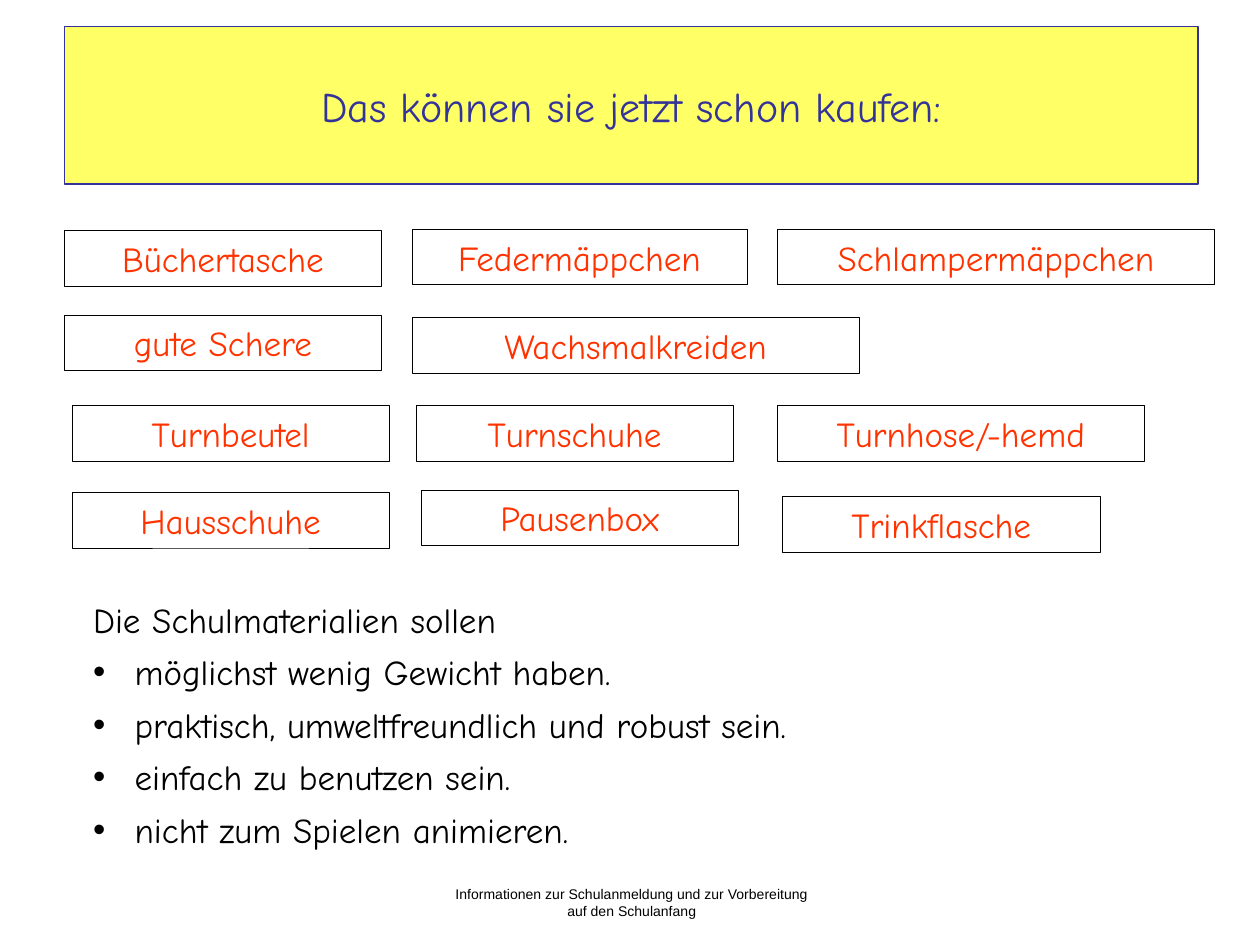
from dataclasses import dataclass

from lxml.etree import SubElement
from pptx import Presentation
from pptx.dml.color import RGBColor as RGB
from pptx.enum.shapes import MSO_SHAPE as SHAPE
from pptx.enum.text import MSO_ANCHOR as ANCHOR, PP_ALIGN as ALIGN
from pptx.oxml.ns import qn
from pptx.util import Inches, Pt


@dataclass(frozen=True)
class Theme:
    font: str = "Comic Neue"
    footer_font: str = "Arial"
    title_size: int = 24
    body_size: int = 20
    footer_size: int = 8
    black: RGB = RGB(0x00, 0x00, 0x00)
    blue: RGB = RGB(0x33, 0x33, 0x99)
    yellow: RGB = RGB(0xFF, 0xFF, 0x66)
    red: RGB = RGB(0xFF, 0x33, 0x00)


T = Theme()
ITEM_HEIGHT = 0.44
ITEMS = [
    ("Büchertasche", 0.51, 1.83, 2.52),
    ("Federmäppchen", 3.27, 1.82, 2.66),
    ("Schlampermäppchen", 6.17, 1.82, 3.47),
    ("gute Schere", 0.51, 2.5, 2.52),
    ("Wachsmalkreiden", 3.27, 2.52, 3.55),
    ("Turnbeutel", 0.57, 3.22, 2.52),
    ("Turnschuhe", 3.3, 3.22, 2.52),
    ("Turnhose/-hemd", 6.17, 3.22, 2.91),
    ("Hausschuhe", 0.57, 3.91, 2.52),
    ("Pausenbox", 3.34, 3.89, 2.52),
    ("Trinkflasche", 6.21, 3.94, 2.52),
]
DEMANDS = [
    "möglichst wenig Gewicht haben.",
    "praktisch, umweltfreundlich und robust sein.",
    "einfach zu benutzen sein.",
    "nicht zum Spielen animieren.",
]


def add_run(p, text, size, color, font=T.font):
    r = p.add_run()
    r.text = text
    r.font.name = font
    r.font.size = Pt(size)
    r.font.color.rgb = color


def add_bullet(p, indent):
    pPr = p._p.get_or_add_pPr()
    pPr.set("marL", str(indent))
    pPr.set("indent", str(-indent))
    SubElement(pPr, qn("a:buFont")).set("typeface", "Arial")
    SubElement(pPr, qn("a:buChar")).set("char", "•")


def add_box(s, text, box, size, color, line, width, fill=None):
    sp = s.shapes.add_shape(SHAPE.RECTANGLE, *map(Inches, box))
    sp.shadow.inherit = False
    if fill is None:
        sp.fill.background()
    else:
        sp.fill.solid()
        sp.fill.fore_color.rgb = fill
    sp.line.color.rgb = line
    sp.line.width = Pt(width)
    tf = sp.text_frame
    tf.word_wrap = True
    tf.vertical_anchor = ANCHOR.MIDDLE
    p = tf.paragraphs[0]
    p.alignment = ALIGN.CENTER
    add_run(p, text, size, color)


def add_text(s, box):
    tf = s.shapes.add_textbox(*map(Inches, box)).text_frame
    tf.word_wrap = True
    return tf


def add_demands(s):
    tf = add_text(s, (0.64, 4.7, 9, 2.54))
    p = tf.paragraphs[0]
    p.space_before = Pt(6)
    add_run(p, "Die Schulmaterialien sollen", T.body_size, T.black)
    for demand in DEMANDS:
        p = tf.add_paragraph()
        p.space_before = Pt(6)
        add_bullet(p, Inches(0.33))
        add_run(p, demand, T.body_size, T.black)


def add_footer(s):
    p = add_text(s, (3.43, 6.98, 3.17, 0.52)).paragraphs[0]
    p.alignment = ALIGN.CENTER
    add_run(p, "Informationen zur Schulanmeldung und zur Vorbereitung auf den Schulanfang",
            T.footer_size, T.black, T.footer_font)


def main():
    prs = Presentation()
    prs.slide_width, prs.slide_height = Inches(10), Inches(7.5)
    s = prs.slides.add_slide(prs.slide_layouts[6])
    add_footer(s)
    add_box(s, "Das können sie jetzt schon kaufen:", (0.51, 0.21, 9, 1.25),
            T.title_size, T.blue, T.blue, 0.75, T.yellow)
    add_demands(s)
    for name, left, top, width in ITEMS:
        add_box(s, name, (left, top, width, ITEM_HEIGHT),
                T.body_size, T.red, T.black, 0.25)
    prs.save("out.pptx")


if __name__ == "__main__":
    main()
